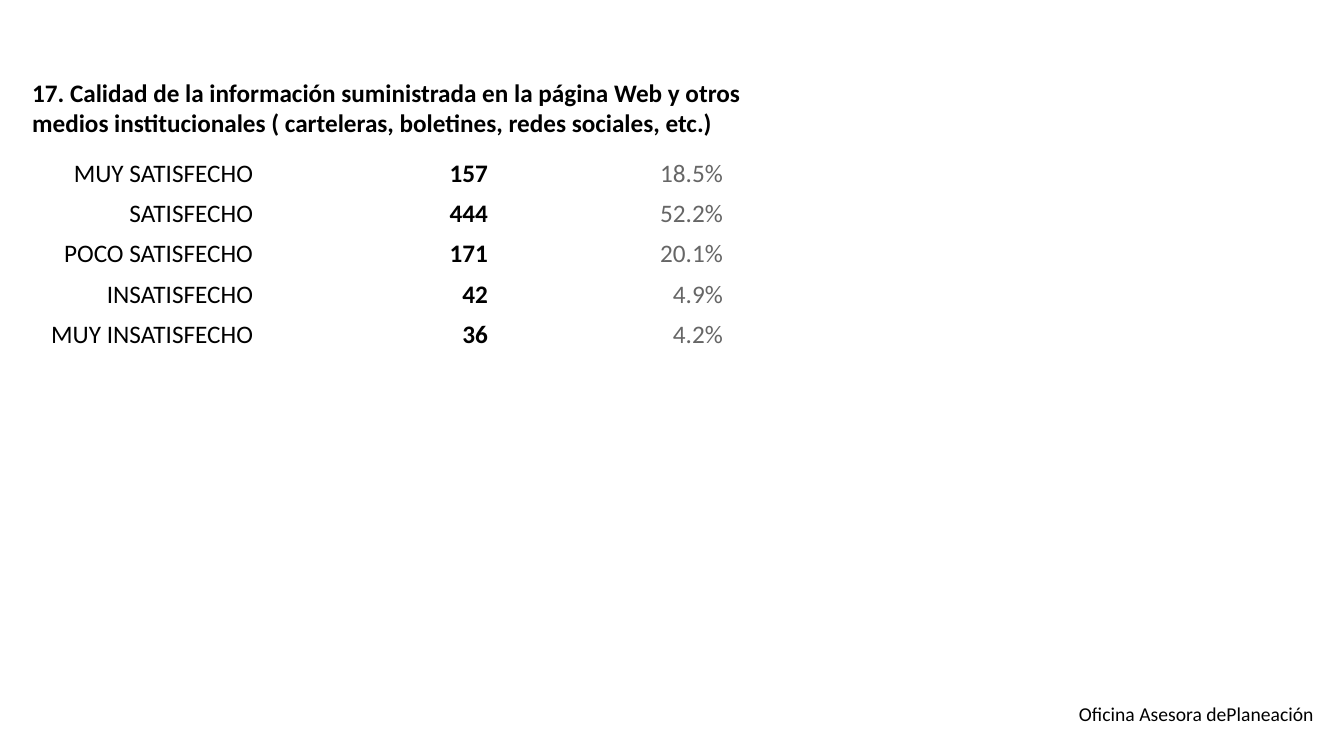
import pptx
import pptx.dml.color
import pptx.enum.text
import pptx.util

Inches = pptx.util.Inches
ALIGN = pptx.enum.text.PP_ALIGN

COLORS = {"text": "000000", "percent": "666666", "background": "FFFFFF"}

SURVEY_RESULTS = [
    ("MUY SATISFECHO", "157", "18.5%"),
    ("SATISFECHO", "444", "52.2%"),
    ("POCO SATISFECHO", "171", "20.1%"),
    ("INSATISFECHO", "42", "4.9%"),
    ("MUY INSATISFECHO", "36", "4.2%"),
]
COLUMN_FORMATS = [{}, {"bold": True}, {"color": "percent"}]


def rgb(name):
    return pptx.dml.color.RGBColor.from_string(COLORS[name])


def write_text(frame, text, size=18, bold=False, color="text", align=ALIGN.LEFT):
    para = frame.paragraphs[0]
    para.alignment = align
    span = para.add_run()
    span.text = text
    span.font.name = "Calibri"
    span.font.size = pptx.util.Pt(size)
    span.font.bold = bold
    span.font.color.rgb = rgb(color)


def add_text_box(page, left, top, width, height, text, **text_format):
    box = page.shapes.add_textbox(
        Inches(left), Inches(top), Inches(width), Inches(height))
    box.text_frame.word_wrap = True
    write_text(box.text_frame, text, **text_format)


def add_results_table(page, left, top, column_width, row_height):
    rows, columns = len(SURVEY_RESULTS), len(COLUMN_FORMATS)
    table = page.shapes.add_table(
        rows, columns, Inches(left), Inches(top),
        Inches(column_width * columns), Inches(row_height * rows)).table
    table.first_row = False
    table.horz_banding = False
    for row, values in zip(table.rows, SURVEY_RESULTS):
        for cell, value, text_format in zip(row.cells, values, COLUMN_FORMATS):
            cell.fill.solid()
            cell.fill.fore_color.rgb = rgb("background")
            write_text(cell.text_frame, value, align=ALIGN.RIGHT, **text_format)


def main():
    deck = pptx.Presentation()
    deck.slide_width = Inches(13.33)
    deck.slide_height = Inches(7.5)
    page = deck.slides.add_slide(deck.slide_layouts[6])
    add_text_box(
        page, 0.22, 0.72, 7.42, 0.71,
        "17. Calidad de la información suministrada en la página Web y otros "
        "medios institucionales ( carteleras, boletines, redes sociales, etc.)",
        bold=True)
    add_results_table(page, 0.28, 1.52, column_width=2.33, row_height=0.4)
    add_text_box(page, 9.46, 6.91, 3.67, 0.34, "Oficina Asesora dePlaneación",
                 size=14, align=ALIGN.RIGHT)
    deck.save("out.pptx")


if __name__ == "__main__":
    main()
